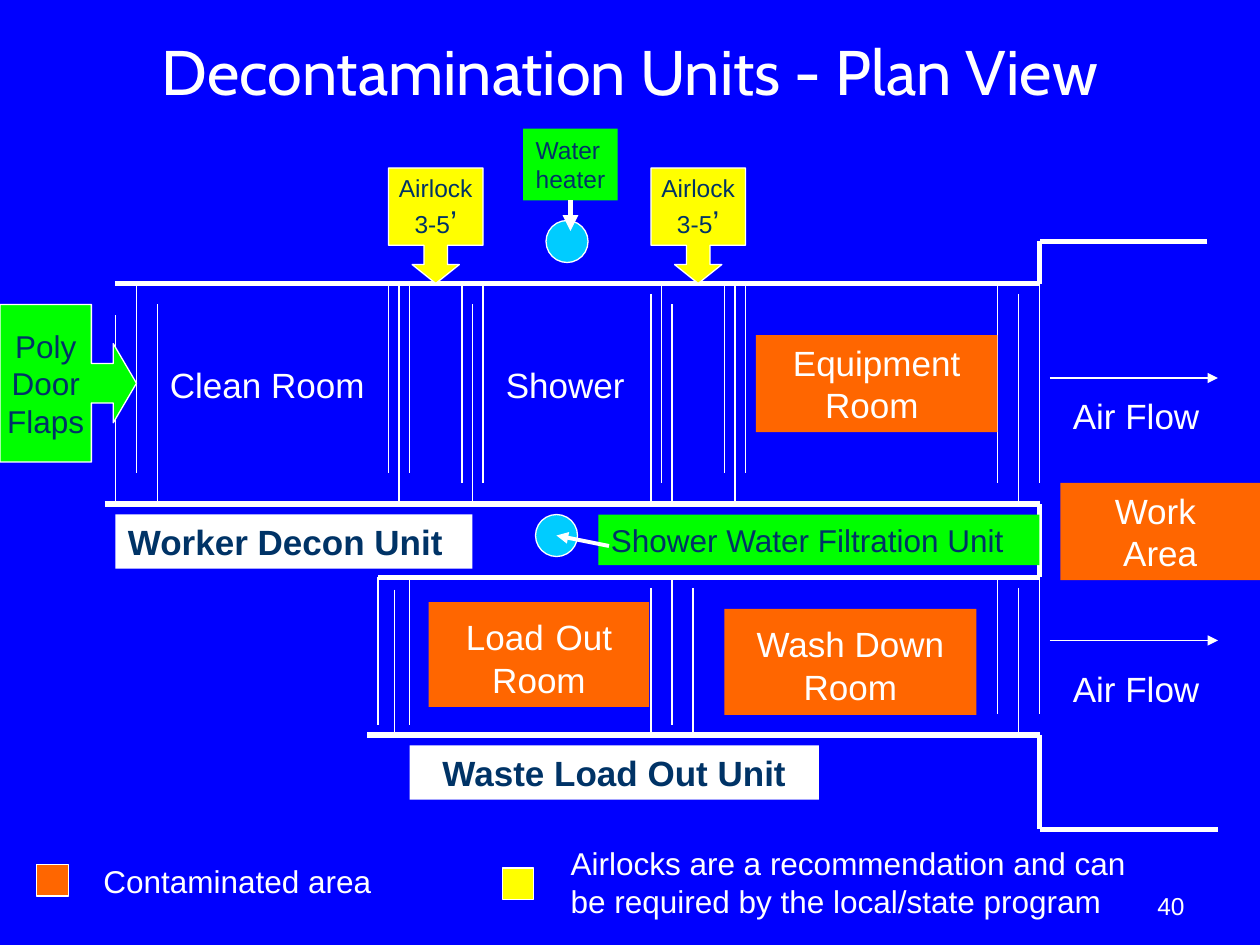
from lxml.etree import SubElement
from pptx import Presentation
from pptx.dml.color import RGBColor as Rgb
from pptx.enum.shapes import MSO_CONNECTOR as Link, MSO_SHAPE as Kind
from pptx.enum.text import MSO_ANCHOR as Anchor, PP_ALIGN as Align
from pptx.oxml.ns import qn
from pptx.util import Pt

HUE = {"blue": "0000FF", "white": "FFFFFF", "navy": "003366", "orange": "FF6600",
       "green": "00FF00", "yellow": "FFFF00", "cyan": "00CCFF"}


def tint(name):
    """Return the named colour."""
    return Rgb.from_string(HUE[name])


def write(shape, lines, size=20, hue="white", align=Align.LEFT, anchor=Anchor.TOP,
          font="Arial", bold=False, wrap=True):
    """Fill a shape with lines, each a list of strings or (string, size) runs."""
    frame = shape.text_frame
    frame.word_wrap = wrap
    frame.vertical_anchor = anchor
    for i, line in enumerate(lines):
        para = frame.add_paragraph() if i else frame.paragraphs[0]
        para.alignment = align
        for part in line:
            text, points = part if isinstance(part, tuple) else (part, size)
            run = para.add_run()
            run.text = text
            run.font.name = font
            run.font.size = Pt(points)
            run.font.bold = bold
            run.font.color.rgb = tint(hue)


def label(slide, box, lines, **style):
    """Add a text box."""
    area = slide.shapes.add_textbox(*map(Pt, box))
    write(area, lines, **style)


def block(slide, box, fill, kind=Kind.RECTANGLE, edge=False):
    """Add a filled shape, with a thin white edge if asked."""
    shape = slide.shapes.add_shape(kind, *map(Pt, box))
    shape.shadow.inherit = False
    shape.fill.solid()
    shape.fill.fore_color.rgb = tint(fill)
    if edge:
        shape.line.color.rgb = tint("white")
        shape.line.width = Pt(0.75)
    else:
        shape.line.fill.background()
    return shape


def sign(slide, box, fill, lines, **style):
    """Add a filled rectangle with text."""
    shape = block(slide, box, fill)
    write(shape, lines, **style)
    return shape


def room(slide, box, lines):
    """Add an orange contaminated room."""
    return sign(slide, box, "orange", lines, align=Align.CENTER)


def rule(slide, start, end, width=0.75, arrow=False):
    """Draw a white line between two points."""
    line = slide.shapes.add_connector(Link.STRAIGHT, *map(Pt, start + end))
    line.line.color.rgb = tint("white")
    line.line.width = Pt(width)
    props = line._element.spPr
    if arrow:
        SubElement(line.line._get_or_add_ln(), qn("a:tailEnd"), type="triangle")
    SubElement(props, qn("a:effectLst"))
    return line


def walls(slide, points):
    """Draw thick walls through a chain of points."""
    for start, end in zip(points, points[1:]):
        rule(slide, start, end, 3)


def flaps(slide, x, y, spans):
    """Hang door flaps, given as (offset, top, bottom)."""
    for dx, top, low in spans:
        rule(slide, (x + dx, y + top), (x + dx, y + low))


def callout(slide, box, kind, fill, steps, lines, size):
    """Add an arrow callout with centred text."""
    shape = block(slide, box, fill, kind, True)
    for i, step in enumerate(steps):
        shape.adjustments[i] = step
    write(shape, lines, size, "navy", Align.CENTER, Anchor.MIDDLE, wrap=False)


def worker(slide, box):
    """Build the worker decon unit: walls, doors, rooms and callouts."""
    x, y, w, h = box
    right, floor = x + w, y + h
    walls(slide, [(right + 96, y - 24), (right, y - 24), (right, y), (x, y)])
    walls(slide, [(x - 6, floor), (right, floor)])
    flaps(slide, x, y, [
        (0, 18, h), (12, 0, 108), (24, 12, h),
        (156, 0, 108), (162, 0, h), (168, 0, 108),
        (198, 0, 114), (204, 12, h), (210, 0, 114),
        (306, 6, h), (312, 0, 114), (318, 12, h),
        (348, 0, 108), (354, 0, h), (360, 0, 108),
        (504, 0, 114), (516, 6, h), (528, -12, 114)])
    label(slide, (x + 24, y + 42, 138, 31), [["Clean Room"]])
    label(slide, (x + 216, y + 42, 114, 31), [["Shower"]])
    room(slide, (x + 366, y + 29.5, 138, 55.5), [["Equipment Room "]])
    sign(slide, (x, floor + 6, 204, 31), "white", [["Worker Decon Unit"]],
         hue="navy", bold=True)
    for dx in (156, 306):
        callout(slide, (x + dx, y - 66, 54, 66), Kind.DOWN_ARROW_CALLOUT, "yellow",
                (0.25, 0.25, 0.2, 0.67), [["Airlock"], ["3-5", ("’", 18)]], 14)
    callout(slide, (0, y + 12, x + 12, 90), Kind.RIGHT_ARROW_CALLOUT, "green",
            (0.29, 0.29, 0.17, 0.67), [["Poly"], ["Door"], ["Flaps"]], 18)


def waste(slide, box):
    """Build the waste load out unit: walls, doors and rooms."""
    x, y, w, h = box
    right, floor = x + w, y + h
    walls(slide, [(right, y - 42), (right, y), (x, y)])
    walls(slide, [(x - 6, floor), (right, floor), (right, floor + 54),
                  (right + 102, floor + 54)])
    flaps(slide, x, y, [
        (0, 0, 84), (9.5, 7, h), (18, 0, 84),
        (156, 6, h), (168, 0, 84), (180, 6, h),
        (354, 0, 78), (366, 6, h), (378, 0, 78)])
    room(slide, (x + 29, y + 14, 126, 60),
         [["Load", (" ", 24), "Out", (" ", 24), "Room"]])
    room(slide, (x + 198, y + 18, 144, 60.5), [["Wash Down", (" ", 24), "Room"]])
    sign(slide, (x + 18, floor + 6, 234, 31), "white", [["Waste Load Out Unit"]],
         hue="navy", bold=True, align=Align.CENTER)


def plant(slide, box):
    """Add the water heater and the shower water filter."""
    x, y, w, h = box
    block(slide, (x + 13, y + 52.5, 24, 24), "cyan", Kind.FLOWCHART_CONNECTOR, True)
    heater = sign(slide, (x, y, 54, 41), "green", [["Water heater"]],
                  size=14, hue="navy")
    feed = rule(slide, (x + 27, y + 41), (x + 27, y + 58.5), 3, True)
    feed.begin_connect(heater, 2)
    low = y + h
    block(slide, (x + 7, low - 29, 24, 24), "cyan", Kind.OVAL, True)
    sign(slide, (x + 43, low - 29, 252, 29), "green",
         [["Shower Water Filtration Unit"]], size=18, hue="navy")
    rule(slide, (x + 49, low - 11), (x + 19, low - 17), 2.25, True)


def yard(slide, box):
    """Add the work area and its air flow arrows."""
    x, y, w, h = box
    for top, drop in ((y, 6), (y + 150, 12)):
        rule(slide, (x - 6, top), (x + 90, top), arrow=True)
        label(slide, (x, top + drop, w, 31), [["Air Flow"]])
    room(slide, (x, y + 60, w, 55.5), [["Work "], ["Area"]])


def legend(slide, box):
    """Add the colour key and the page number."""
    x, y, w, h = box
    block(slide, (x, y + 15, 18, 18), "orange", edge=True)
    label(slide, (x + 31, y + 10, 182, 29), [["Contaminated area"]], size=18)
    block(slide, (x + 266, y + 17, 18, 18), "yellow", edge=True)
    label(slide, (x + 298, y, 354, h),
          [["Airlocks are a recommendation and can be required by the local/state program"]],
          size=18)
    label(slide, (x + 495, y + 13, 168, 37.5), [["40"]], size=14,
          align=Align.RIGHT, anchor=Anchor.BOTTOM)


def main():
    """Build and save the slide."""
    deck = Presentation()
    deck.slide_width, deck.slide_height = Pt(720), Pt(540)
    slide = deck.slides.add_slide(deck.slide_layouts[6])
    slide.background.fill.solid()
    slide.background.fill.fore_color.rgb = tint("blue")
    label(slide, (54, 12, 612, 56), [["Decontamination Units - Plan View"]], size=36,
          align=Align.CENTER, anchor=Anchor.MIDDLE, font="Cabin")
    worker(slide, (66, 162, 528, 126))
    waste(slide, (216, 330, 378, 90))
    plant(slide, (299, 73.5, 295, 249.5))
    yard(slide, (606, 216, 114, 204))
    legend(slide, (21, 479, 652, 51))
    deck.save("out.pptx")


if __name__ == "__main__":
    main()
